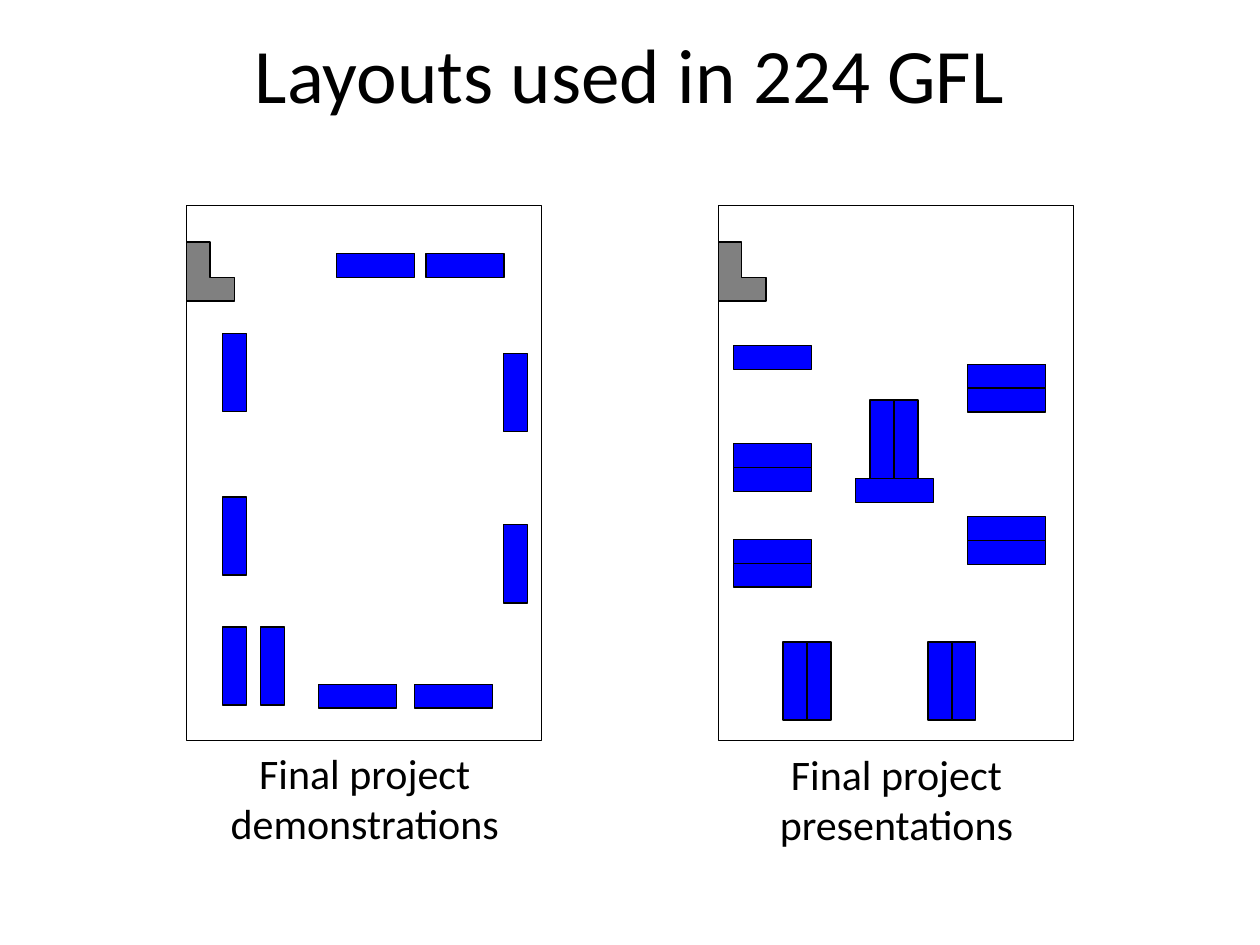
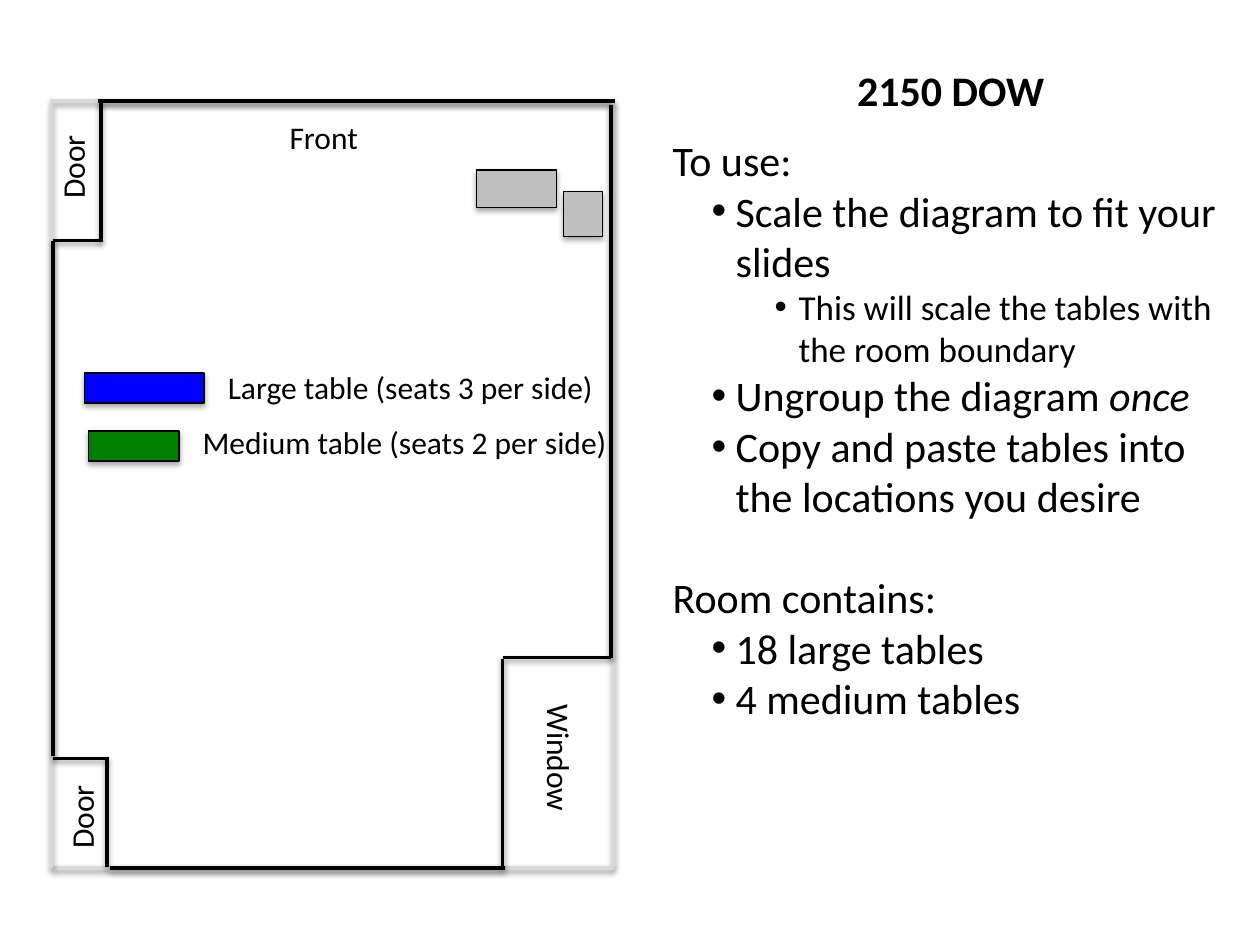
"""Build two slides of room layouts with tables, walls and notes."""
from lxml.etree import SubElement
from pptx import Presentation
from pptx.dml.color import RGBColor
from pptx.enum.shapes import MSO_CONNECTOR, MSO_SHAPE
from pptx.enum.text import MSO_ANCHOR, PP_ALIGN
from pptx.oxml.ns import qn
from pptx.util import Pt

PX = 9144
FONT = "Calibri"
BLACK = RGBColor(0x00, 0x00, 0x00)
BLUE = RGBColor(0x00, 0x00, 0xFF)
GREEN = RGBColor(0x00, 0x80, 0x00)
GRAY = RGBColor(0x80, 0x80, 0x80)
SILVER = RGBColor(0xBF, 0xBF, 0xBF)
PALE = RGBColor(0xD9, 0xD9, 0xD9)
RECT = MSO_SHAPE.RECTANGLE
LEFT, MID = PP_ALIGN.LEFT, PP_ALIGN.CENTER


def text(slide, rect, lines, size=24, align=LEFT, bold=False, turn=0, wrap=True):
    box = slide.shapes.add_textbox(*[n * PX for n in rect])
    box.rotation = turn
    frame = box.text_frame
    frame.word_wrap = wrap
    frame.vertical_anchor = MSO_ANCHOR.TOP
    if isinstance(lines, str):
        lines = [(0, lines)]
    for i, (level, *parts) in enumerate(lines):
        para = frame.add_paragraph() if i else frame.paragraphs[0]
        para.alignment = align
        if level:
            para.level = level - 1
            props = para._p.get_or_add_pPr()
            props.set("marL", str(level * 50 * PX))
            props.set("indent", str(-19 * PX))
            SubElement(props, qn("a:buFont"), typeface="Arial")
            SubElement(props, qn("a:buChar"), char="•")
        elif i:
            para.space_before = Pt(29)
        for j, part in enumerate(parts):
            run = para.add_run()
            run.text = part
            run.font.name = FONT
            run.font.size = Pt(20 if level == 2 else size)
            run.font.bold = bold
            run.font.italic = j > 0
            run.font.color.rgb = BLACK


def ink(item, color=BLACK, width=0.75, shade=0):
    item.line.color.rgb = color
    item.line.width = Pt(width)
    glow = SubElement(item.element.spPr, qn("a:effectLst"))
    if shade:
        cast = SubElement(glow, qn("a:outerShdw"), blurRad="40000", dist="21500",
                          dir="5400000", rotWithShape="0")
        tint = SubElement(cast, qn("a:srgbClr"), val="000000")
        SubElement(tint, qn("a:alpha"), val=str(shade * 1000))


deck = Presentation()
deck.slide_width, deck.slide_height = 1000 * PX, 750 * PX
blank = deck.slide_layouts[6]

slide = deck.slides.add_slide(blank)
talk = [(582, 274, 0)]
for x, y in [(582, 352), (768, 289), (768, 410), (582, 428)]:
    talk += [(x, y + 19, 0), (x, y, 0)]
for x, y in [(600, 531), (715, 531), (669, 339)]:
    talk += [(x, y, 90), (x + 19, y, 90)]
talk.append((679, 380, 0))
demo = [(x, 201, 0) for x in (267, 338)]
demo += [(x, 543, 0) for x in (253, 329)]
demo += [(155, y, 90) for y in (286, 416, 519)]
demo += [(185, 519, 90), (378, 438, 90), (378, 302, 90)]

for left, top, tables, name in [
    (570, 589, talk, "Final project presentations"),
    (148, 588, demo, "Final project demonstrations"),
]:
    group = slide.shapes.add_group_shape()
    room = group.shapes.add_shape(RECT, left * PX, 163 * PX, 282 * PX, 425 * PX)
    room.fill.background()
    ink(room)
    desk = group.shapes.add_shape(MSO_SHAPE.CORNER, left * PX, 192 * PX, 38 * PX, 47 * PX)
    desk.adjustments[0], desk.adjustments[1] = 0.49, 0.49
    desk.fill.solid()
    desk.fill.fore_color.rgb = GRAY
    ink(desk)
    for x, y, turn in tables:
        table = group.shapes.add_shape(RECT, x * PX, y * PX, 62 * PX, 19 * PX)
        table.rotation = turn
        table.fill.solid()
        table.fill.fore_color.rgb = BLUE
        ink(table)
    text(slide, (left + 1, top, 281, 91), name, align=MID)
text(slide, (50, 16, 900, 125), "Layouts used in 224 GFL", size=44, align=MID)

slide = deck.slides.add_slide(blank)
bounds = [(40, 80, 485, 80), (487, 688, 487, 82), (42, 689, 487, 689), (41, 689, 41, 83)]
walls = [
    (399, 522, 485, 522), (42, 191, 80, 191), (42, 602, 85, 602), (87, 689, 401, 689),
    (78, 80, 488, 80), (80, 192, 80, 81), (85, 688, 85, 601), (399, 688, 399, 523),
    (42, 600, 42, 191), (485, 522, 485, 83),
]
for color, lines in [(PALE, bounds), (BLACK, walls)]:
    for ends in lines:
        wall = slide.shapes.add_connector(MSO_CONNECTOR.STRAIGHT, *[n * PX for n in ends])
        ink(wall, color, 2, 38)

for rect, color in [
    ((67, 296, 95, 24), BLUE), ((70, 342, 72, 24), GREEN),
    ((447, 152, 31, 36), SILVER), ((378, 135, 64, 30), SILVER),
]:
    block = slide.shapes.add_shape(RECT, *[n * PX for n in rect])
    block.fill.solid()
    block.fill.fore_color.rgb = color
    ink(block, shade=35)

for rect, name, turn in [
    ((220, 89, 76, 40), "Front", 0), ((22, 112, 71, 40), "Door", 270),
    ((29, 628, 71, 40), "Door", 270), ((391, 582, 106, 40), "Window", 90),
]:
    text(slide, rect, name, size=18, turn=turn, wrap=False)
text(slide, (171, 287, 326, 40), "Large table (seats 3 per side)", size=18)
text(slide, (151, 331, 347, 40), "Medium table (seats 2 per side)", size=18)
text(slide, (524, 102, 457, 481), [
    (0, "To use:"),
    (1, "Scale the diagram to fit your slides"),
    (2, "This will scale the tables with the room boundary"),
    (1, "Ungroup the diagram ", "once"),
    (1, "Copy and paste tables into the locations you desire"),
    (0, "Room contains:"),
    (1, "18 large tables"),
    (1, "4 medium tables"),
])
text(slide, (526, 46, 457, 50), "2150 DOW", align=MID, bold=True)

deck.save("out.pptx")
